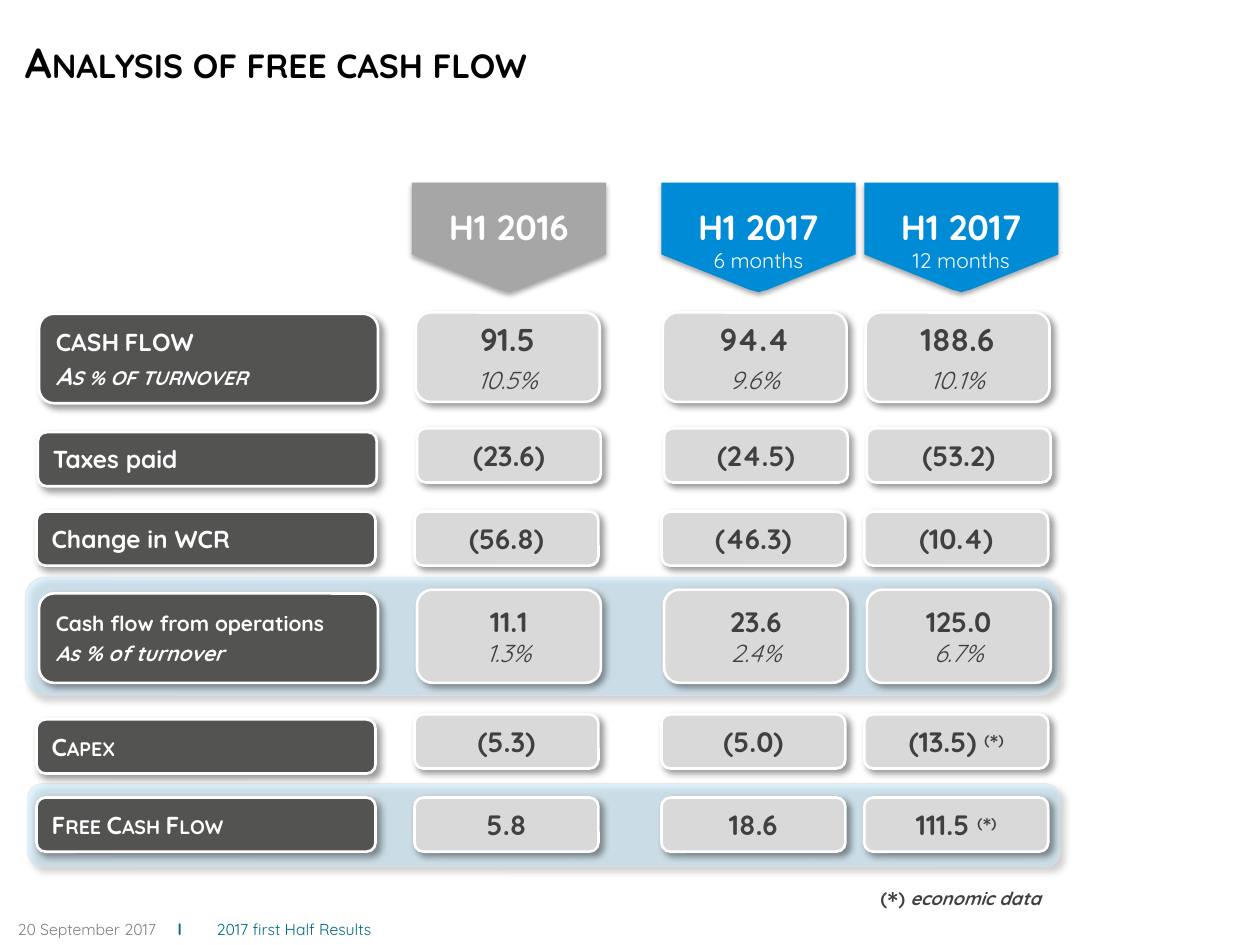
from lxml.etree import SubElement
from pptx import Presentation
from pptx.dml.color import RGBColor
from pptx.enum.shapes import MSO_SHAPE as SHAPE
from pptx.enum.text import MSO_ANCHOR as ANCHOR, PP_ALIGN as ALIGN
from pptx.oxml.ns import qn
from pptx.util import Inches, Pt

FONT = "Quicksand"
WHITE, DARK, GREY, BLUE = "FFFFFF", "404040", "808080", "006983"
rgb = RGBColor.from_string


def add_runs(p, runs, color):
    """Add (text, size, flags) runs; flags: b bold, i italic, c small caps, s superscript."""
    for text, size, flags in runs:
        r = p.add_run()
        r.text = text
        r.font.name, r.font.size = FONT, Pt(size)
        r.font.bold, r.font.italic = "b" in flags, "i" in flags
        r.font.color.rgb = rgb(color)
        if "c" in flags:
            r.font._element.set("cap", "small")
        if "s" in flags:
            r.font._element.set("baseline", "30000")


def style(sp, fill, line=None, width=1.5, shadow=(4, 3, 45, 40)):
    """Set fill, outline and outer shadow (blur pt, distance pt, angle, opacity %)."""
    sp.fill.solid()
    sp.fill.fore_color.rgb = rgb(fill)
    if line:
        sp.line.color.rgb = rgb(line)
        sp.line.width = Pt(width)
    else:
        sp.line.fill.background()
    sp.shadow.inherit = False
    blur, dist, angle, opacity = shadow
    effects = sp._element.spPr.find(qn("a:effectLst"))
    outer = SubElement(effects, qn("a:outerShdw"), blurRad=str(Pt(blur)), dist=str(Pt(dist)),
                       dir=str(angle * 60000), algn="ctr", rotWithShape="0")
    clr = SubElement(outer, qn("a:srgbClr"), val="000000")
    SubElement(clr, qn("a:alpha"), val=str(opacity * 1000))


prs = Presentation()
prs.slide_width, prs.slide_height = Inches(10), Inches(7.5)
s = prs.slides.add_slide(prs.slide_layouts[6])

# Footer
tf = s.shapes.add_textbox(Inches(0.14), Inches(7.23), Inches(4.96), Inches(0.29)).text_frame
tf.margin_left = tf.margin_right = tf.margin_top = tf.margin_bottom = 0
tf.word_wrap = True
tf.vertical_anchor = ANCHOR.MIDDLE
p = tf.paragraphs[0]
tabs = SubElement(p._p.get_or_add_pPr(), qn("a:tabLst"))
for stop in (1.27, 1.58):
    SubElement(tabs, qn("a:tab"), pos=str(Inches(stop)), algn="l")
add_runs(p, [("20 September 2017\t", 9, "")], GREY)
add_runs(p, [("l", 9, "b"), ("\t2017 first Half Results", 9, "")], BLUE)

# Highlight bands
for x, y, w, h in [(0.22, 6.22, 8.19, 0.66), (0.2, 4.58, 8.2, 0.94)]:
    band = s.shapes.add_shape(SHAPE.ROUNDED_RECTANGLE, Inches(x), Inches(y), Inches(w), Inches(h))
    style(band, "C3EBFF", "E2E2E2", 0.25)
    clr = band._element.spPr.find(qn("a:solidFill")).find(qn("a:srgbClr"))
    SubElement(clr, qn("a:alpha"), val="45000")

# Title
tf = s.shapes.add_textbox(Inches(0.1), Inches(0.24), Inches(9), Inches(0.5)).text_frame
tf.word_wrap = True
add_runs(tf.paragraphs[0], [("Analysis of free cash flow", 24, "bc")], "000000")

# Column headers: banners with a rounded point
BANNER = [(0, 0.57), (0.7, 0.85), (0.74, 0.86), (0.77, 0.87), (0.8, 0.86), (0.84, 0.85),
          (1.54, 0.57), (1.54, 0)]
headers = [(3.27, "A6A6A6", "H1 2016", None), (5.25, "008BD7", "H1 2017", "6 months"),
           (6.86, "008BD7", "H1 2017", "12 months")]
for x, fill, period, months in headers:
    top = 1.45
    fb = s.shapes.build_freeform(Inches(x), Inches(top))
    fb.add_line_segments([(Inches(x + dx), Inches(top + dy)) for dx, dy in BANNER])
    sp = fb.convert_to_shape()
    style(sp, fill, shadow=(3.1, 1.8, 90, 35))
    tf = sp.text_frame
    tf.word_wrap = True
    tf.vertical_anchor = ANCHOR.TOP
    tf.margin_left = tf.margin_right = Inches(0.08)
    tf.margin_top, tf.margin_bottom = Inches(0.18), Inches(0.05)
    p = tf.paragraphs[0]
    p.alignment = ALIGN.CENTER
    add_runs(p, [(period, 20, "b")], WHITE)
    if months:
        p = tf.add_paragraph()
        p.alignment = ALIGN.CENTER
        add_runs(p, [(months, 12, "")], WHITE)

# Rows: label left, top, height; value shift, top, height; label lines; value lines; gaps (pt)
NOTE = [("(", 14, "bs"), ("*", 14, "b"), (")", 14, "bs")]
rows = [
    ((0.31, 2.49, 0.71), (0.01, 2.48, 0.71),
     [("CASH FLOW", 14, "bc"), ("As % of turnover", 14, "bci")],
     [("91.5", "10.5%"), ("94.4", "9.6%"), ("188.6", "10.1%")], 18, 2.8, 3.8),
    ((0.3, 3.43, 0.43), (0.02, 3.4, 0.43), [("Taxes paid", 14, "b")],
     [("(23.6)",), ("(24.5)",), ("(53.2)",)], 16, 0, 0),
    ((0.29, 4.06, 0.43), (0, 4.06, 0.43), [("Change in WCR", 14, "b")],
     [("(56.8)",), ("(46.3)",), ("(10.4)",)], 16, 0, 0),
    ((0.31, 4.71, 0.71), (0.02, 4.68, 0.74),
     [("Cash flow from operations", 12, "b"), ("As % of turnover", 12, "bi")],
     [("11.1", "1.3%"), ("23.6", "2.4%"), ("125.0", "6.7%")], 16, 2.4, 0),
    ((0.29, 5.71, 0.43), (0, 5.67, 0.43), [("Capex", 14, "bc")],
     [("(5.3)",), ("(5.0)",), ("(13.5) *",)], 16, 0, 0),
    ((0.29, 6.33, 0.43), (0, 6.33, 0.43), [("Free Cash Flow", 14, "bc")],
     [("5.8",), ("18.6",), ("111.5 *",)], 16, 0, 0),
]
for (left, top, height), (shift, cell_top, cell_height), label, values, size, gap, cell_gap in rows:
    boxes = [(left, top, 2.69, height, "535452", WHITE, [[run] for run in label], gap)]
    for x, texts in zip((3.29, 5.25, 6.86), values):
        main = texts[0].rstrip("*")
        lines = [[(main, size, "b")] + (NOTE if main != texts[0] else [])]
        lines += [[(share, 14, "i")] for share in texts[1:]]
        boxes.append((x + shift, cell_top, 1.46, cell_height, "D9D9D9", DARK, lines, cell_gap))
    for i, (x, y, w, h, fill, color, lines, space) in enumerate(boxes):
        sp = s.shapes.add_shape(SHAPE.ROUNDED_RECTANGLE, Inches(x), Inches(y), Inches(w), Inches(h))
        style(sp, fill, WHITE)
        tf = sp.text_frame
        tf.vertical_anchor = ANCHOR.MIDDLE
        tf.word_wrap = i == 0
        if i:
            tf.margin_left = tf.margin_right = Inches(0.04)
        for j, runs in enumerate(lines):
            p = tf.add_paragraph() if j else tf.paragraphs[0]
            p.alignment = ALIGN.CENTER if i else ALIGN.LEFT
            if j:
                p.space_before = Pt(space)
            add_runs(p, runs, color)

# Footnote
tf = s.shapes.add_textbox(Inches(6.75), Inches(6.96), Inches(1.75), Inches(0.4)).text_frame
tf.word_wrap = False
p = tf.paragraphs[0]
p.alignment = ALIGN.CENTER
add_runs(p, [("(", 18, "bs"), ("*", 18, "b"), (") ", 18, "bs"), ("economic data", 18, "bis")], DARK)

prs.save("out.pptx")
